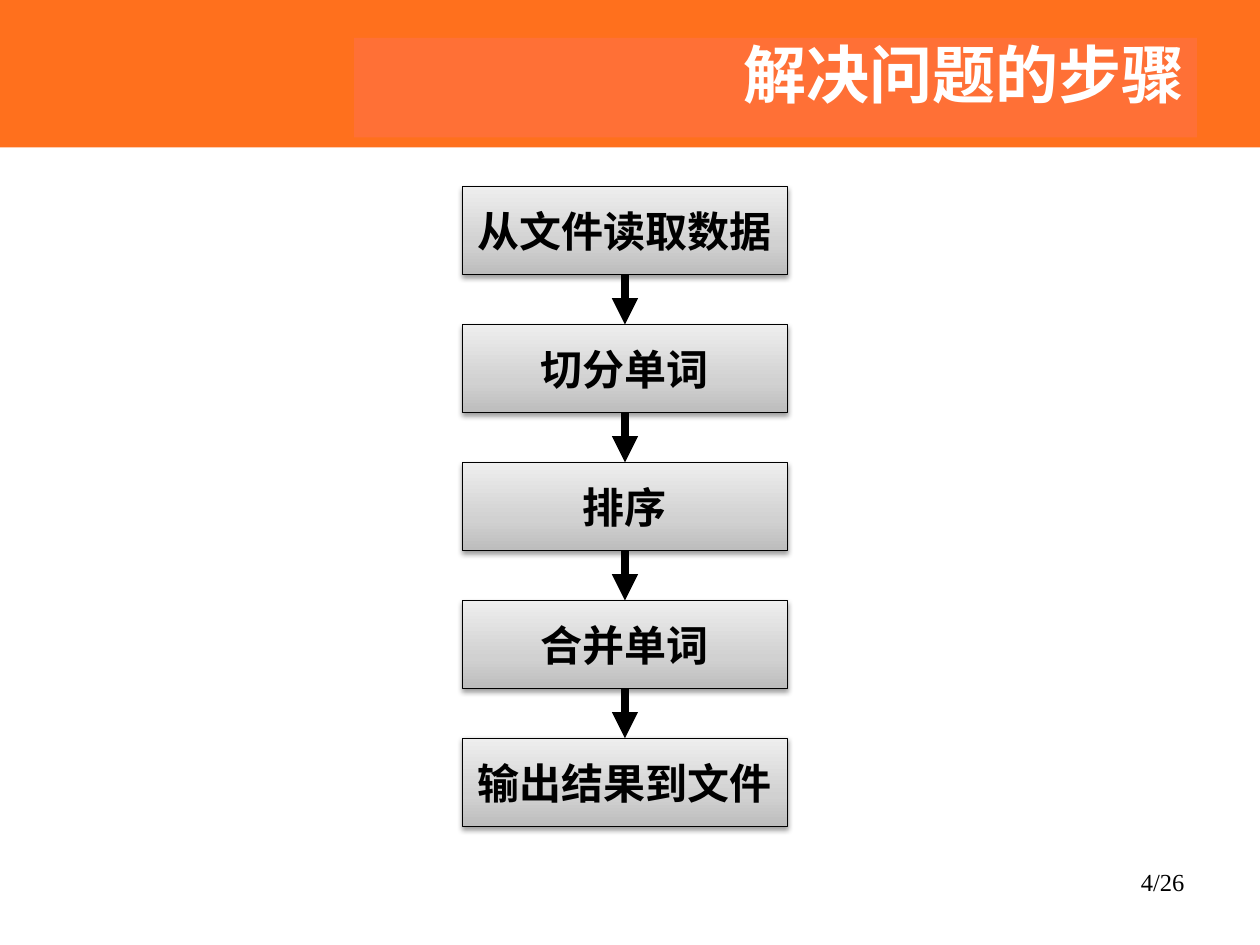
from itertools import pairwise

from lxml import etree
from pptx import Presentation
from pptx import util as u
from pptx.dml.color import RGBColor
from pptx.enum import shapes, text
from pptx.oxml import parse_xml
from pptx.oxml.ns import qn

NAMESPACE = "http://schemas.openxmlformats.org/drawingml/2006/main"
STEPS = ["从文件读取数据", "切分单词", "排序", "合并单词", "输出结果到文件"]
GRADIENT = [(0, "BDBDBD"), (35, "D1D1D1"), (100, "EEEEEE")]


def color(value):
    return RGBColor.from_string(value)


def inches(*lengths):
    return [u.Inches(length) for length in lengths]


def add_rectangle(page, box, fill):
    shape = page.shapes.add_shape(shapes.MSO_SHAPE.RECTANGLE, *inches(*box))
    shape.shadow.inherit = False
    shape.fill.solid()
    shape.fill.fore_color.rgb = color(fill)
    shape.line.fill.background()
    return shape


def add_line(page, start, end, line_color, width):
    line = page.shapes.add_connector(
        shapes.MSO_CONNECTOR.STRAIGHT, *inches(*start, *end))
    line.line.color.rgb = color(line_color)
    line.line.width = u.Pt(width)
    etree.SubElement(line._element.spPr, qn("a:effectLst"))
    return line


def write(shape, words, align, anchor, font_color, **font):
    frame = shape.text_frame
    frame.word_wrap = True
    frame.vertical_anchor = anchor
    para = frame.paragraphs[0]
    para.alignment = align
    span = para.add_run()
    span.text = words
    for name, value in font.items():
        setattr(span.font, name, value)
    span.font.color.rgb = color(font_color)
    return para


def add_header(page, box):
    left, top, width, height = box
    add_line(page, (left, 1.09), (left + width, 1.09), "FF6600", 10)
    add_rectangle(page, box, "FF701D")
    title = add_rectangle(page, (left + 2.81, top + 0.3, 6.69, 0.79), "FF7036")
    para = write(title, "解决问题的步骤", text.PP_ALIGN.RIGHT, text.MSO_ANCHOR.TOP,
                 "FFFFFF", name="Arial", size=u.Pt(36), bold=True)
    para.line_spacing = 0.9


def add_step(page, box, words):
    step = add_rectangle(page, box, "D1D1D1")
    step.line.color.rgb = color("000000")
    step.line.width = u.Pt(0.75)
    properties = step._element.spPr
    stops = "".join(
        f'<a:gs pos="{place * 1000}"><a:srgbClr val="{value}"/></a:gs>'
        for place, value in GRADIENT)
    properties.replace(properties.find(qn("a:solidFill")), parse_xml(
        f'<a:gradFill xmlns:a="{NAMESPACE}" rotWithShape="1"><a:gsLst>{stops}</a:gsLst>'
        '<a:lin ang="16200000" scaled="1"/></a:gradFill>'))
    properties.find(qn("a:effectLst")).append(parse_xml(
        f'<a:outerShdw xmlns:a="{NAMESPACE}" blurRad="{u.Pt(3.1)}" dist="{u.Pt(1.6)}" '
        'dir="5400000" rotWithShape="0"><a:srgbClr val="000000">'
        '<a:alpha val="38000"/></a:srgbClr></a:outerShdw>'))
    write(step, words, text.PP_ALIGN.CENTER, text.MSO_ANCHOR.MIDDLE,
          "000000", name="Arial", size=u.Pt(24), bold=True)
    return step


def add_flow(page, box):
    left, top, width, height = box
    step_height = 0.7
    pitch = (height - step_height) / (len(STEPS) - 1)
    steps = [add_step(page, (left, top + row * pitch, width, step_height), words)
             for row, words in enumerate(STEPS)]
    for upper, lower in pairwise(steps):
        arrow = add_line(page, (left, top), (left, top), "000000", 5)
        arrow.begin_connect(upper, 2)
        arrow.end_connect(lower, 0)
        etree.SubElement(arrow.line._get_or_add_ln(), qn("a:tailEnd"), type="triangle")


def add_page_number(page, box):
    number = page.shapes.add_textbox(*inches(*box))
    write(number, "4/26", text.PP_ALIGN.RIGHT, text.MSO_ANCHOR.TOP,
          "000000", name="Times New Roman", size=u.Pt(14))


def main():
    deck = Presentation()
    deck.slide_width, deck.slide_height = inches(10, 7.5)
    page = deck.slides.add_slide(deck.slide_layouts[6])
    add_header(page, (0, 0, 10, 1.17))
    add_page_number(page, (7.17, 6.83, 2.33, 0.52))
    add_flow(page, (3.67, 1.48, 2.58, 5.08))
    deck.save("out.pptx")


if __name__ == "__main__":
    main()
